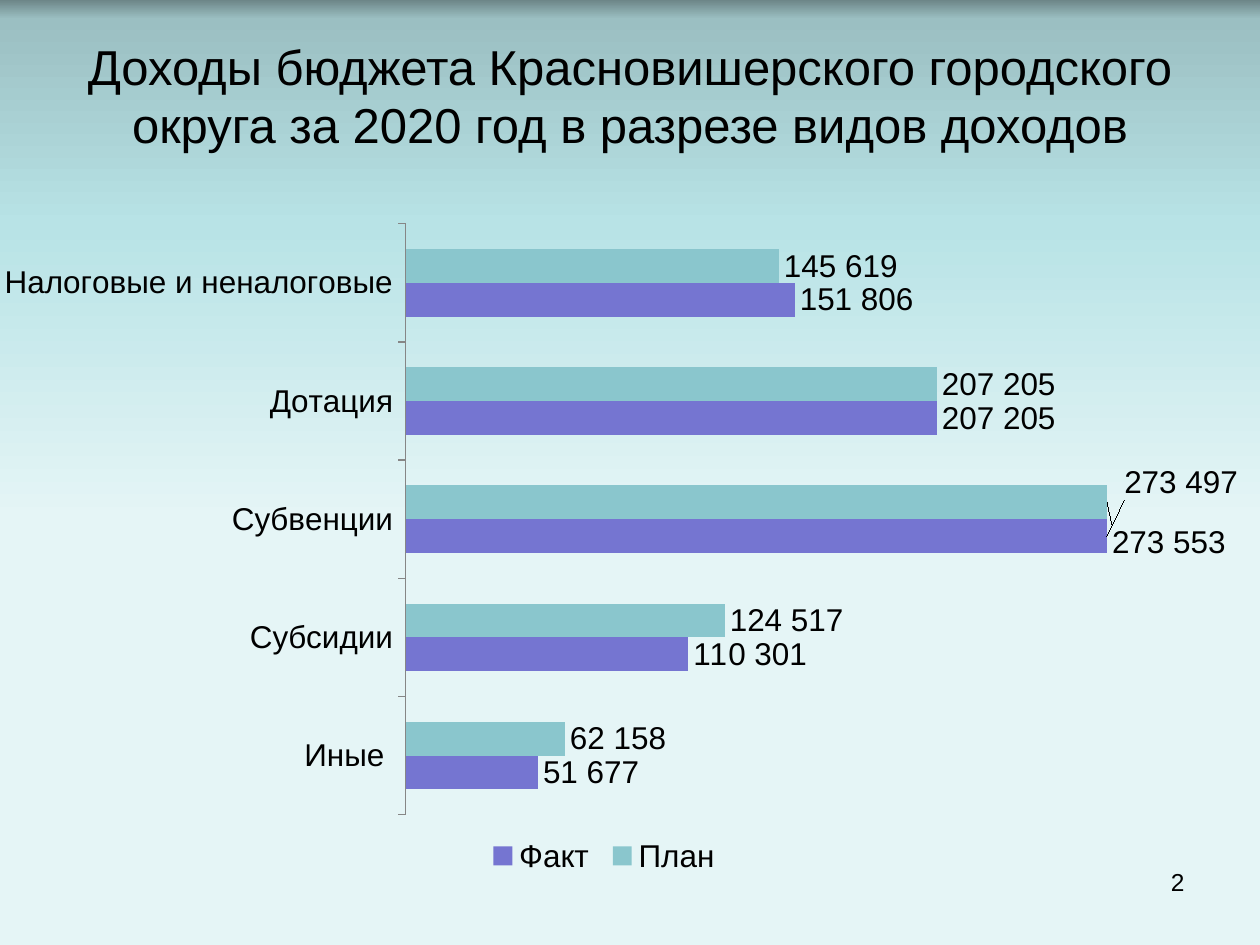
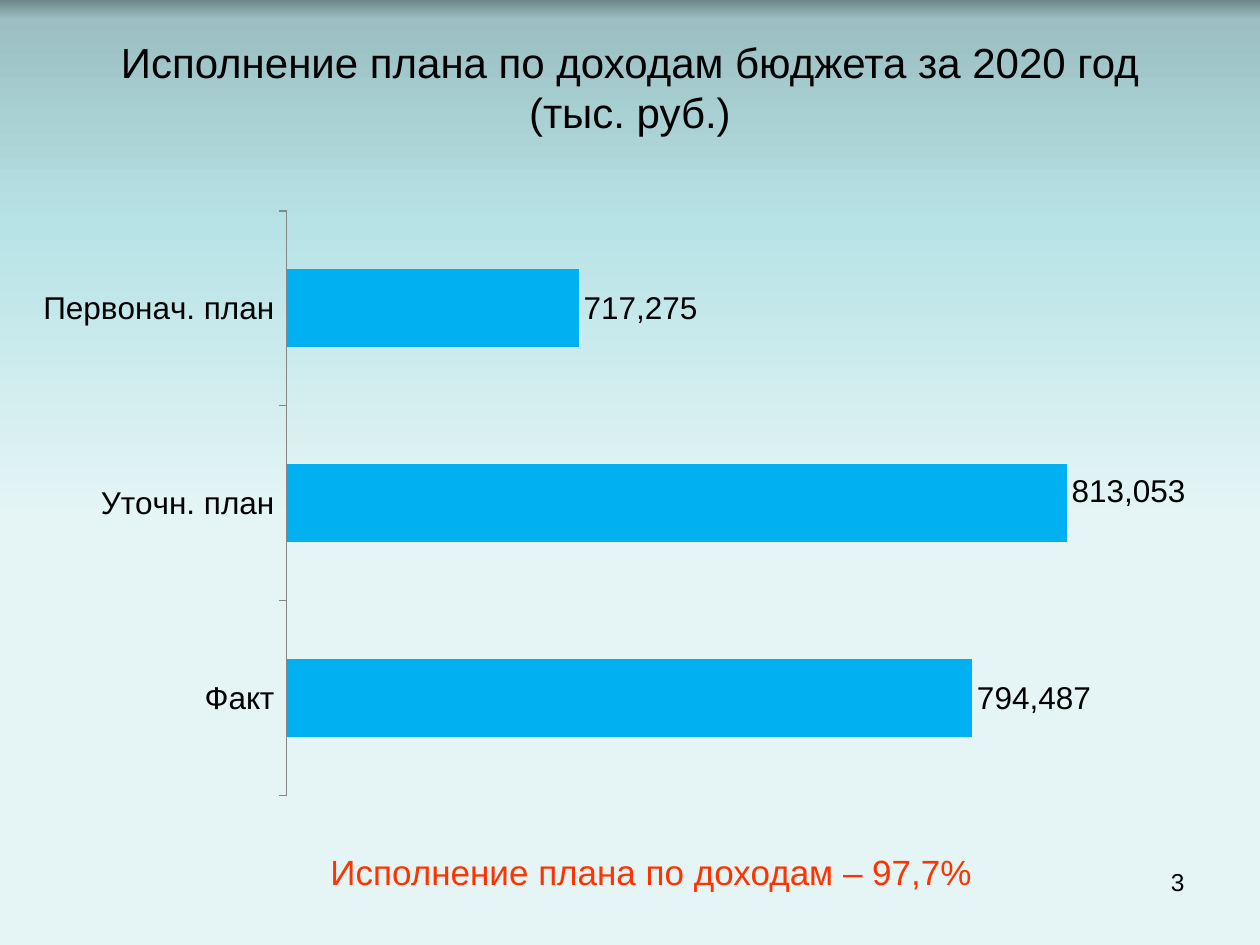
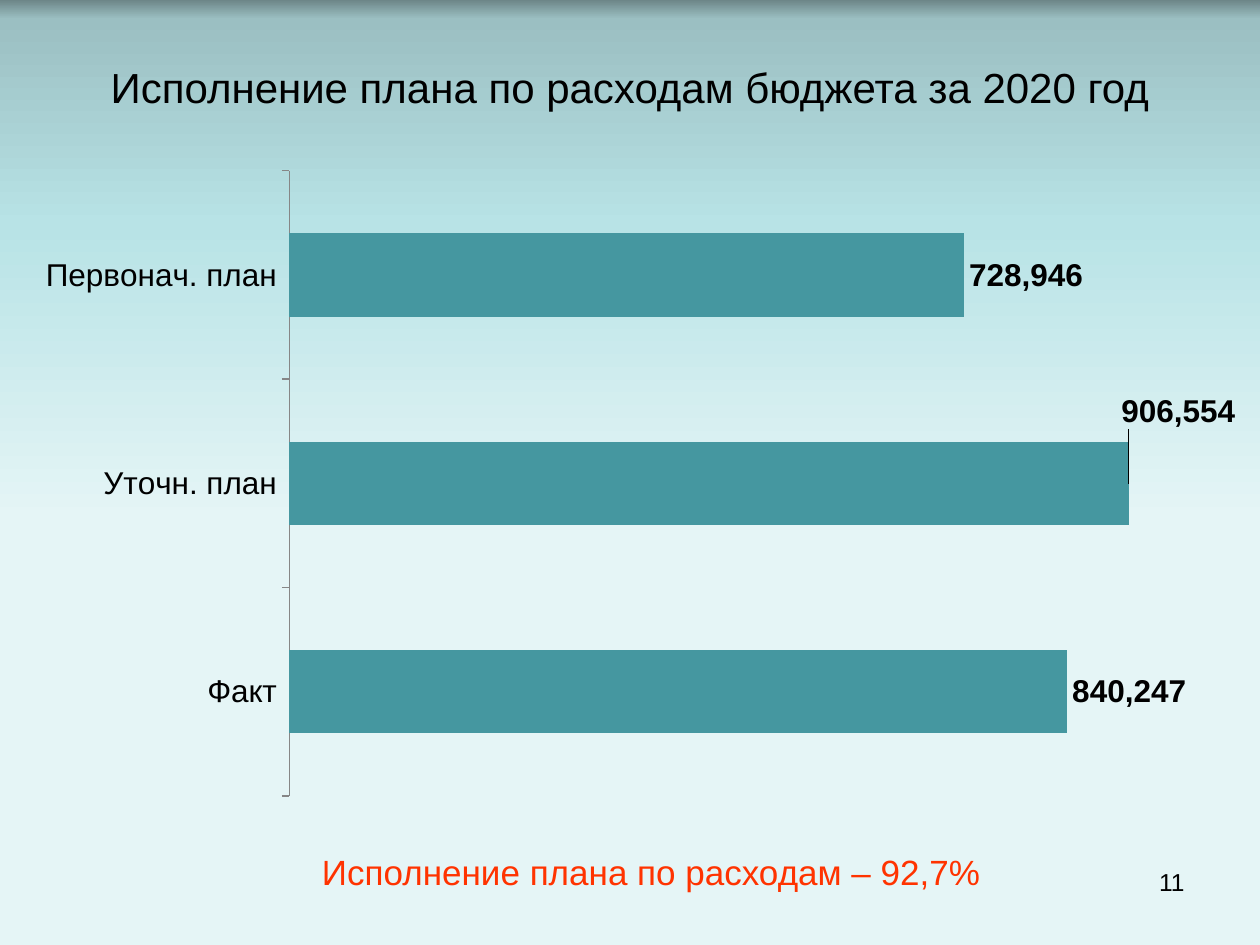
from copy import deepcopy
from dataclasses import dataclass

from lxml import etree
from pptx import Presentation
from pptx.chart.data import CategoryChartData
from pptx.dml.color import RGBColor
from pptx.enum.chart import XL_CHART_TYPE, XL_LABEL_POSITION, XL_LEGEND_POSITION, XL_TICK_MARK
from pptx.enum.text import MSO_ANCHOR, PP_ALIGN
from pptx.oxml.ns import qn
from pptx.util import Cm, Pt

BARS = XL_CHART_TYPE.BAR_CLUSTERED
OUTSIDE_END = XL_LABEL_POSITION.OUTSIDE_END
LEGEND_BOTTOM = XL_LEGEND_POSITION.BOTTOM
TICK_OUT, TICK_NONE = XL_TICK_MARK.OUTSIDE, XL_TICK_MARK.NONE
TOP, MIDDLE = MSO_ANCHOR.TOP, MSO_ANCHOR.MIDDLE
CENTER, RIGHT = PP_ALIGN.CENTER, PP_ALIGN.RIGHT


@dataclass(frozen=True)
class Theme:
    font: str = "Arial"
    text: str = "000000"
    accent: str = "FF3300"
    axis: str = "868686"
    plan: str = "8AC6CD"
    fact: str = "7575D1"
    income: str = "00B0F0"
    spending: str = "4597A0"
    background: tuple = ((0, "6D8688"), (2, "9BBFC2"), (24, "B8E3E6"), (55, "E5F5F6"))
    big_title_size: int = 28
    title_size: int = 24
    summary_size: int = 20
    chart_size: int = 18
    number_size: int = 14


THEME = Theme()

# Boxes are (left, top, width, height) in centimetres.
BIG_TITLE_BOX = (1.27, 0.43, 22.86, 2.97)
TITLE_BOX = (1.27, 0.76, 22.86, 1.98)
NUMBER_BOX = (18.21, 17.35, 5.92, 1.32)
SUMMARY_BOX = (5.51, 17.15, 15.24, 0.84)

STAGES = ["Факт", "Уточн. план", "Первонач. план"]

# Plot and legend areas are fractions of the chart; "moved" maps a point to its label shift.
SLIDES = [
    {
        "title": "Доходы бюджета Красновишерского городского округа "
                 "за 2020 год в разрезе видов доходов",
        "title_box": BIG_TITLE_BOX,
        "title_size": THEME.big_title_size,
        "number": "2",
        "summary": None,
        "chart": {
            "box": (-0.08, 4.24, 25.04, 13.54),
            "plot": (0.33, 0.02, 0.62, 0.88),
            "legend": (0.39, 0.93, 0.2, 0.07),
            "range": (0, 300000),
            "top_down": True,
            "number_format": '#" "##0',
            "bold_labels": False,
            "categories": ["Налоговые и неналоговые", "Дотация", "Субвенции",
                           "Субсидии", "Иные "],
            "series": [
                {"name": "План", "color": THEME.plan, "moved": {2: (0, 0.06)},
                 "values": [145619, 207205, 273553, 124517, 62158]},
                {"name": "Факт", "color": THEME.fact, "moved": {2: (0.01, -0.08)},
                 "values": [151806, 207205, 273497, 110301, 51677]},
            ],
        },
    },
    {
        "title": "Исполнение плана по доходам бюджета за 2020 год (тыс. руб.)",
        "title_box": TITLE_BOX,
        "title_size": THEME.title_size,
        "number": "3",
        "summary": "Исполнение плана по доходам – 97,7%",
        "chart": {
            "box": (0.43, 4.01, 24.33, 12.27),
            "plot": (0.22, 0.02, 0.76, 0.96),
            "legend": None,
            "range": (660000, 840000),
            "top_down": False,
            "number_format": "#,##0",
            "bold_labels": False,
            "categories": STAGES,
            "series": [{"name": "Доходы", "color": THEME.income, "moved": {1: (0, -0.02)},
                        "values": [794487, 813053, 717275]}],
        },
    },
    {
        "title": "Исполнение плана по расходам бюджета за 2020 год",
        "title_box": TITLE_BOX,
        "title_size": THEME.title_size,
        "number": "11",
        "summary": "Исполнение плана по расходам – 92,7%",
        "chart": {
            "box": (0.43, 3.18, 24.56, 13.13),
            "plot": (0.22, 0.02, 0.76, 0.96),
            "legend": None,
            "range": (0, 1000000),
            "top_down": False,
            "number_format": "#,##0",
            "bold_labels": True,
            "categories": STAGES,
            "series": [{"name": "Расходы", "color": THEME.spending, "moved": {1: (-0.01, -0.11)},
                        "values": [840247, 906554, 728946]}],
        },
    },
]


def to_cm(box):
    return [Cm(length) for length in box]


def style_font(font, size, color=THEME.text, bold=False):
    font.name = THEME.font
    font.size = Pt(size)
    font.bold = bold
    font.color.rgb = RGBColor.from_string(color)


def paint_background(master):
    fill = master.background.fill
    fill.gradient()
    fill.gradient_angle = 270
    stops = master.element.find(".//" + qn("p:bgPr")).find(".//" + qn("a:gsLst"))
    for stop in list(stops):
        stops.remove(stop)
    for percent, color in THEME.background:
        stop = etree.SubElement(stops, qn("a:gs"), pos=str(percent * 1000))
        etree.SubElement(stop, qn("a:srgbClr"), val=color)


def add_text(slide, text, box, size, align, anchor, color=THEME.text):
    frame = slide.shapes.add_textbox(*to_cm(box)).text_frame
    frame.word_wrap = True
    frame.vertical_anchor = anchor
    frame.text = text
    paragraph = frame.paragraphs[0]
    paragraph.alignment = align
    style_font(paragraph.runs[0].font, size, color)


def set_layout(parent, index, **settings):
    """Give a chart part a manual layout, as its child at the given index."""
    for old in parent.findall(qn("c:layout")):
        parent.remove(old)
    layout = etree.Element(qn("c:layout"))
    manual = etree.SubElement(layout, qn("c:manualLayout"))
    for tag, value in settings.items():
        etree.SubElement(manual, qn(f"c:{tag}"), val=str(value))
    parent.insert(index, layout)


def move_label(series, point, shift):
    series.points[point].data_label.position = OUTSIDE_END
    labels = series.data_labels._element
    label = next(item for item in labels.findall(qn("c:dLbl"))
                 if item.find(qn("c:idx")).get("val") == str(point))
    set_layout(label, 1, x=shift[0], y=shift[1])
    for old in label.findall(qn("c:txPr")):
        label.remove(old)
    for index, tag in enumerate(("c:numFmt", "c:txPr"), start=2):
        label.insert(index, deepcopy(labels.find(qn(tag))))


def style_series(series, content, chart_content):
    series.format.fill.solid()
    series.format.fill.fore_color.rgb = RGBColor.from_string(content["color"])
    series.invert_if_negative = False
    labels = series.data_labels
    labels.show_value = True
    labels.position = OUTSIDE_END
    labels.number_format = chart_content["number_format"]
    labels.number_format_is_linked = False
    style_font(labels.font, THEME.chart_size, bold=chart_content["bold_labels"])
    for point, shift in content["moved"].items():
        move_label(series, point, shift)


def add_bar_chart(slide, content):
    data = CategoryChartData(number_format=content["number_format"])
    data.categories = content["categories"]
    for series in content["series"]:
        data.add_series(series["name"], series["values"])
    chart = slide.shapes.add_chart(BARS, *to_cm(content["box"]), data).chart
    chart.has_title = False
    style_font(chart.font, THEME.chart_size)

    plot = chart.plots[0]
    plot.gap_width = 150
    plot.overlap = 0
    plot.vary_by_categories = False
    for series, series_content in zip(plot.series, content["series"]):
        style_series(series, series_content, content)

    categories = chart.category_axis
    categories.reverse_order = content["top_down"]
    categories.major_tick_mark = TICK_OUT
    categories.minor_tick_mark = TICK_NONE
    categories.has_major_gridlines = False
    categories.format.line.color.rgb = RGBColor.from_string(THEME.axis)
    categories.format.line.width = Pt(0.75)

    values = chart.value_axis
    values.minimum_scale, values.maximum_scale = content["range"]
    values.has_major_gridlines = False
    values.visible = False

    x, y, w, h = content["plot"]
    set_layout(chart.element.find(".//" + qn("c:plotArea")), 0, layoutTarget="inner",
               xMode="edge", yMode="edge", x=x, y=y, w=w, h=h)

    chart.has_legend = content["legend"] is not None
    if chart.has_legend:
        chart.legend.position = LEGEND_BOTTOM
        chart.legend.include_in_layout = False
        x, y, w, h = content["legend"]
        set_layout(chart.element.find(".//" + qn("c:legend")), 1,
                   xMode="edge", yMode="edge", x=x, y=y, w=w, h=h)


def main():
    deck = Presentation()
    deck.slide_width, deck.slide_height = Cm(25.4), Cm(19.05)
    paint_background(deck.slide_master)
    blank = deck.slide_layouts[6]
    for content in SLIDES:
        slide = deck.slides.add_slide(blank)
        add_text(slide, content["title"], content["title_box"], content["title_size"],
                 CENTER, MIDDLE)
        add_bar_chart(slide, content["chart"])
        add_text(slide, content["number"], NUMBER_BOX, THEME.number_size, RIGHT, TOP)
        if content["summary"]:
            add_text(slide, content["summary"], SUMMARY_BOX, THEME.summary_size,
                     CENTER, MIDDLE, THEME.accent)
    deck.save("out.pptx")


if __name__ == "__main__":
    main()
